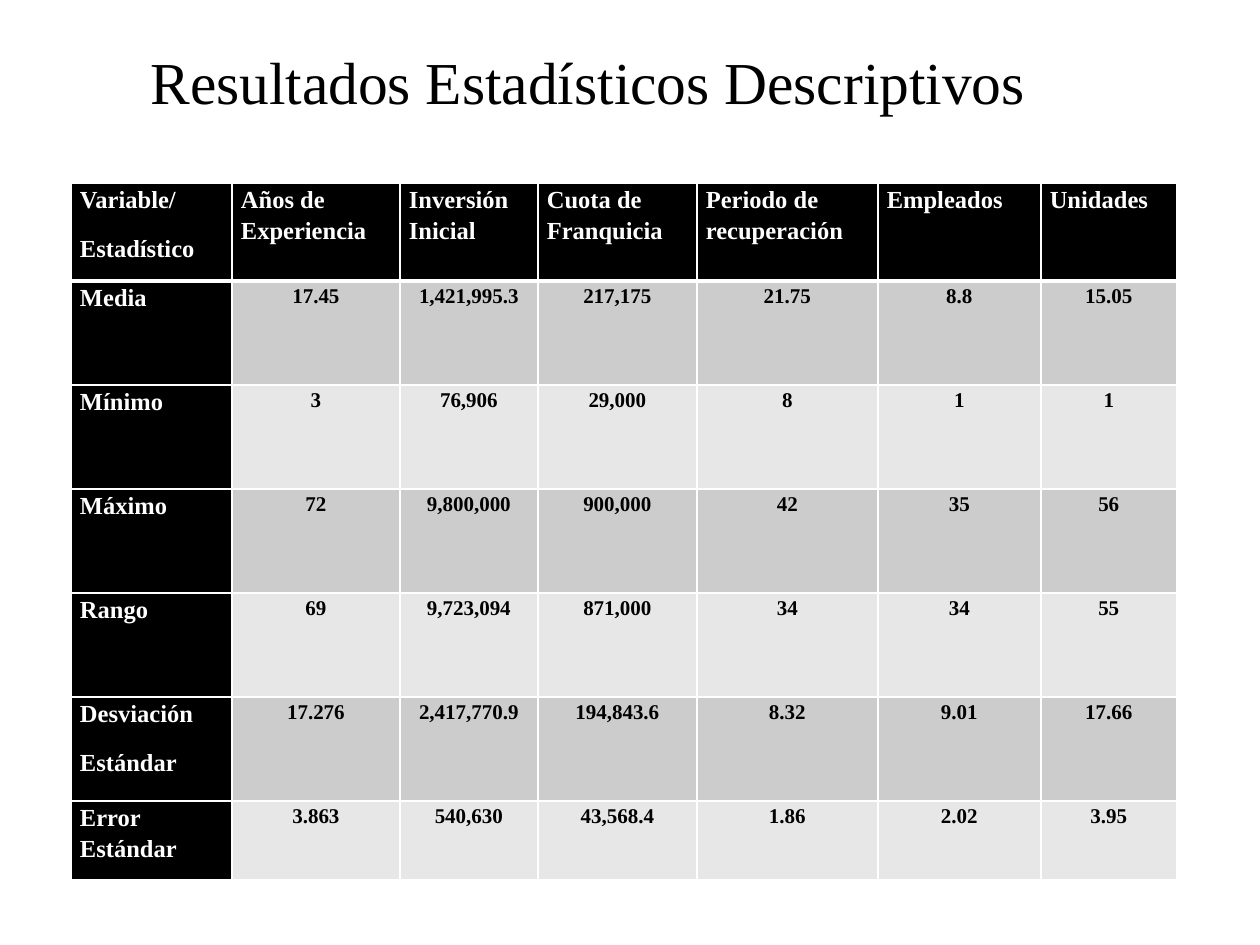
"""Build a slide with a table of descriptive statistics."""
from dataclasses import dataclass

from lxml.etree import SubElement
from pptx import Presentation
from pptx.dml.color import RGBColor
from pptx.enum.text import MSO_ANCHOR, MSO_AUTO_SIZE, PP_ALIGN
from pptx.oxml.ns import qn
from pptx.util import Emu, Pt


@dataclass(frozen=True)
class Theme:
    font: str = "Times New Roman"
    black: str = "000000"
    white: str = "FFFFFF"
    bands: tuple[str, str] = ("CCCCCC", "E7E7E7")
    title_size: int = 34
    label_size: int = 14
    value_size: int = 12
    thin: int = 1
    thick: int = 3


@dataclass(frozen=True)
class Statistic:
    label: str
    values: tuple[str, ...]


@dataclass(frozen=True)
class CellStyle:
    fill: str
    color: str
    size: int
    align: PP_ALIGN
    top: int
    bottom: int


THEME = Theme()
PX_PER_INCH = 126
HEADINGS = (
    "Variable/\nEstadístico", "Años de Experiencia", "Inversión Inicial",
    "Cuota de Franquicia", "Periodo de recuperación", "Empleados", "Unidades",
)
STATISTICS = (
    Statistic("Media", ("17.45", "1,421,995.3", "217,175", "21.75", "8.8", "15.05")),
    Statistic("Mínimo", ("3", "76,906", "29,000", "8", "1", "1")),
    Statistic("Máximo", ("72", "9,800,000", "900,000", "42", "35", "56")),
    Statistic("Rango", ("69", "9,723,094", "871,000", "34", "34", "55")),
    Statistic("Desviación\nEstándar",
              ("17.276", "2,417,770.9", "194,843.6", "8.32", "9.01", "17.66")),
    Statistic("Error Estándar", ("3.863", "540,630", "43,568.4", "1.86", "2.02", "3.95")),
)
COLUMN_WIDTHS = (161, 168, 138, 159, 181, 163, 136)
ROW_HEIGHTS = (98, 104, 104, 104, 104, 104, 79)


def px(length: int) -> Emu:
    return Emu(round(length * 914400 / PX_PER_INCH))


def set_font(paragraph, size: int, color: str, bold: bool) -> None:
    font = paragraph.font
    font.name, font.size, font.bold = THEME.font, Pt(size), bold
    font.color.rgb = RGBColor.from_string(color)


def set_borders(cell, top: int, bottom: int) -> None:
    properties = cell._tc.get_or_add_tcPr()
    widths = {"a:lnL": THEME.thin, "a:lnR": THEME.thin, "a:lnT": top, "a:lnB": bottom}
    for position, (side, width) in enumerate(widths.items()):
        line = SubElement(properties, qn(side), w=str(Pt(width)))
        fill = SubElement(line, qn("a:solidFill"))
        SubElement(fill, qn("a:srgbClr"), val=THEME.white)
        properties.insert(position, line)


def fill_cell(cell, wording: str, style: CellStyle) -> None:
    cell.fill.solid()
    cell.fill.fore_color.rgb = RGBColor.from_string(style.fill)
    cell.margin_left = cell.margin_right = px(9)
    cell.margin_top = cell.margin_bottom = 0
    cell.text_frame.text = wording
    for paragraph in cell.text_frame.paragraphs:
        paragraph.alignment = style.align
        paragraph.line_spacing = 1.15
        paragraph.space_after = Pt(10)
        set_font(paragraph, style.size, style.color, True)
    set_borders(cell, style.top, style.bottom)


def cell_style(row: int, column: int) -> CellStyle:
    top = THEME.thick if row == 1 else THEME.thin
    bottom = THEME.thick if row == 0 else THEME.thin
    if row == 0 or column == 0:
        return CellStyle(THEME.black, THEME.white, THEME.label_size,
                         PP_ALIGN.LEFT, top, bottom)
    return CellStyle(THEME.bands[(row - 1) % 2], THEME.black, THEME.value_size,
                     PP_ALIGN.CENTER, top, bottom)


def add_title(slide, wording: str) -> None:
    title = slide.shapes.title
    title.left, title.top, title.width, title.height = map(px, (42, 37, 1092, 88))
    frame = title.text_frame
    frame.text = wording
    frame.auto_size = MSO_AUTO_SIZE.NONE
    frame.vertical_anchor = MSO_ANCHOR.MIDDLE
    frame.paragraphs[0].alignment = PP_ALIGN.CENTER
    set_font(frame.paragraphs[0], THEME.title_size, THEME.black, False)


def add_statistics(slide) -> None:
    rows = (HEADINGS, *((item.label, *item.values) for item in STATISTICS))
    table = slide.shapes.add_table(
        len(rows), len(HEADINGS), px(71), px(183),
        px(sum(COLUMN_WIDTHS)), px(sum(ROW_HEIGHTS))).table
    table.first_col = True
    for column, width in zip(table.columns, COLUMN_WIDTHS):
        column.width = px(width)
    for row, height in zip(table.rows, ROW_HEIGHTS):
        row.height = px(height)
    for row, entries in enumerate(rows):
        for column, wording in enumerate(entries):
            fill_cell(table.cell(row, column), wording, cell_style(row, column))


def main() -> None:
    presentation = Presentation()
    presentation.slide_width, presentation.slide_height = px(1260), px(945)
    slide = presentation.slides.add_slide(presentation.slide_layouts[5])
    add_title(slide, "Resultados Estadísticos Descriptivos")
    add_statistics(slide)
    presentation.save("out.pptx")


if __name__ == "__main__":
    main()
